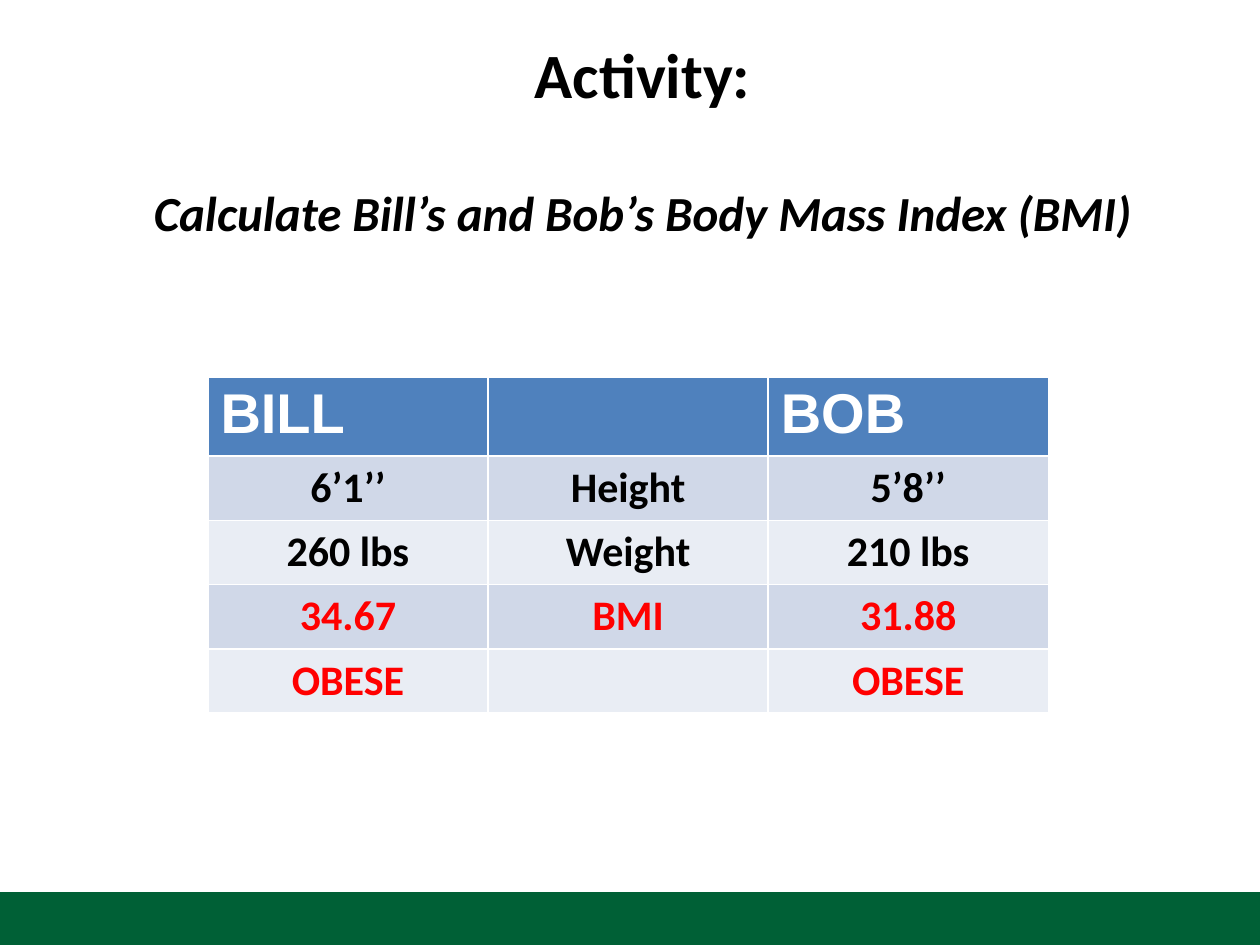
"""Build the BMI activity slide with its comparison table."""
from pptx import Presentation
from pptx import util as u
from pptx.dml import color
from pptx.enum import shapes, text


def rgb(value):
    return color.RGBColor.from_string(value)


def write(paragraph, content, size=24, font="Calibri", ink="000000", italic=False,
          align=text.PP_ALIGN.CENTER):
    paragraph.alignment = align
    run = paragraph.add_run()
    run.text = content
    run.font.size = u.Pt(size)
    run.font.name = font
    run.font.bold = True
    run.font.italic = italic
    run.font.color.rgb = rgb(ink)


presentation = Presentation()
presentation.slide_width = u.Inches(10)
presentation.slide_height = u.Inches(7.5)
slide = presentation.slides.add_slide(presentation.slide_layouts[5])

band_height = u.Inches(0.42)
band = slide.shapes.add_shape(
    shapes.MSO_SHAPE.RECTANGLE, 0, presentation.slide_height - band_height,
    presentation.slide_width, band_height)
band.shadow.inherit = False
band.fill.solid()
band.fill.fore_color.rgb = rgb("006036")
band.line.fill.background()

title = slide.shapes.title
title.left, title.top = u.Inches(0.2), u.Inches(0.7)
title.width, title.height = u.Inches(9.8), u.Inches(0.8)
frame = title.text_frame
frame.auto_size = text.MSO_AUTO_SIZE.NONE
frame.vertical_anchor = text.MSO_ANCHOR.MIDDLE
write(frame.paragraphs[0], "Activity:", size=36)
subtitle = frame.add_paragraph()
subtitle.space_before = u.Pt(41)
write(subtitle, "Calculate Bill’s and Bob’s Body Mass Index (BMI)", size=28, italic=True)

rows = [
    ("BILL", "", "BOB"),
    ("6’1’’", "Height", "5’8’’"),
    ("260 lbs", "Weight", "210 lbs"),
    ("34.67", "BMI", "31.88"),
    ("OBESE", "", "OBESE"),
]
header_height, row_height = u.Inches(0.63), u.Inches(0.51)
table = slide.shapes.add_table(
    len(rows), len(rows[0]), u.Inches(1.65), u.Inches(2.99), u.Inches(6.67),
    header_height + row_height * (len(rows) - 1)).table

for row_index, values in enumerate(rows):
    header = row_index == 0
    table.rows[row_index].height = header_height if header else row_height
    fill = "4F81BD" if header else ("E9EDF4", "D0D8E8")[row_index % 2]
    for column_index, value in enumerate(values):
        cell = table.cell(row_index, column_index)
        cell.fill.solid()
        cell.fill.fore_color.rgb = rgb(fill)
        paragraph = cell.text_frame.paragraphs[0]
        if not value:
            continue
        if header:
            write(paragraph, value, size=32, font="Arial", ink="FFFFFF",
                  align=text.PP_ALIGN.LEFT)
        else:
            write(paragraph, value, ink="FF0000" if row_index > 2 else "000000")

presentation.save("out.pptx")
